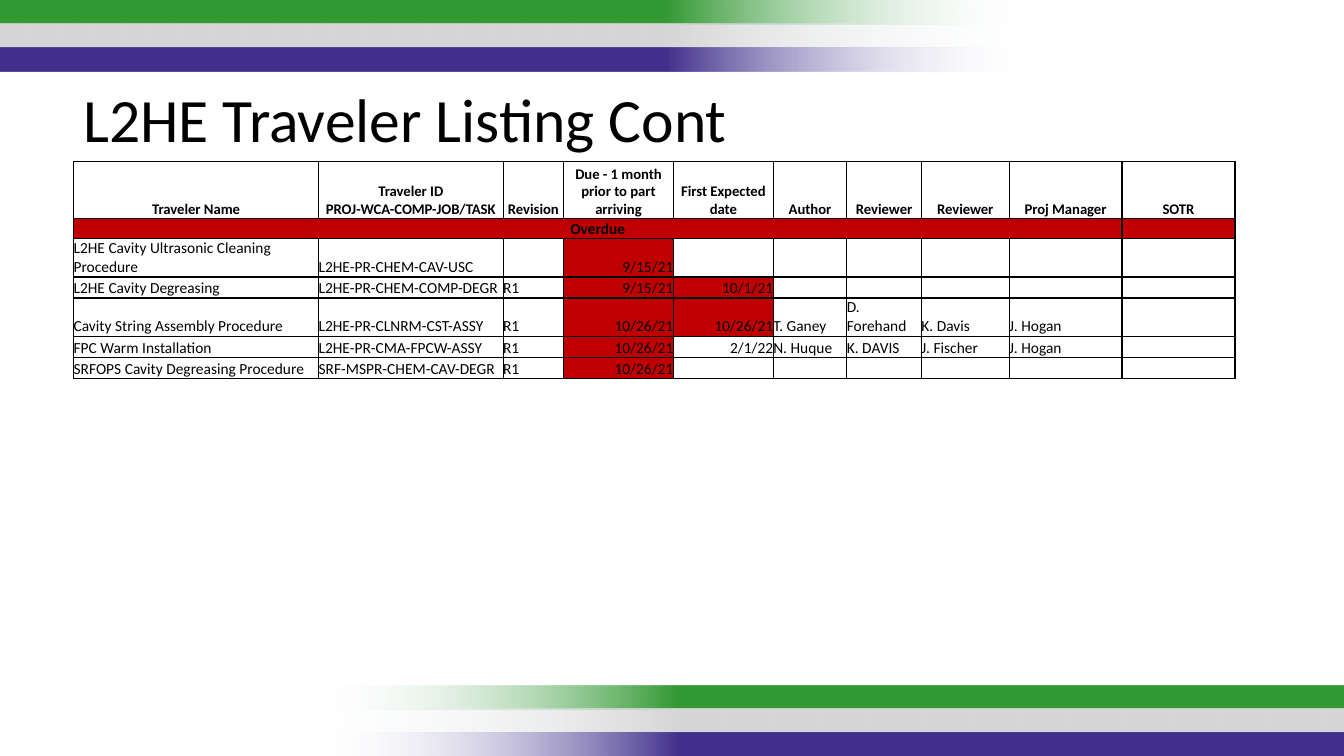
from dataclasses import dataclass

from lxml import etree
from pptx import Presentation
from pptx import util as u
from pptx.dml.color import RGBColor
from pptx.enum import shapes, text
from pptx.oxml import ns

BLACK = RGBColor(0x00, 0x00, 0x00)
RED = RGBColor(0xC0, 0x00, 0x00)
PALE = RGBColor(0xF7, 0xFA, 0xFD)
GREEN = RGBColor(0x33, 0x99, 0x33)
GRAY = RGBColor(0xD6, 0xD6, 0xD6)
PURPLE = RGBColor(0x42, 0x31, 0x8C)
FONT = "Calibri"

LEFT = text.PP_ALIGN.LEFT
MID = text.PP_ALIGN.CENTER
RIGHT = text.PP_ALIGN.RIGHT

WIDTHS = [2.43, 1.83, 0.6, 1.09, 0.99, 0.73, 0.74, 0.87, 1.12, 1.12]
HEIGHTS = [0.57, 0.2] + [0.21] * 5
HEADS = ["Traveler Name", "Traveler ID\nPROJ-WCA-COMP-JOB/TASK", "Revision",
         "Due - 1 month prior to part arriving", "First Expected date",
         "Author", "Reviewer", "Reviewer", "Proj Manager", "SOTR"]
DATES = (3, 4)  # columns that hold dates


@dataclass
class Band:
    left: float
    top: float
    color: RGBColor
    turn: int


@dataclass
class Job:
    cells: list[str]
    late: tuple[int, ...] = (3,)  # overdue date columns


BANDS = [
    Band(-0.02, 0, GREEN, 180),
    Band(-0.01, 0.23, GRAY, 180),
    Band(-0.01, 0.47, PURPLE, 180),
    Band(3.17, 6.8, GREEN, 0),
    Band(3.18, 7.03, GRAY, 0),
    Band(3.18, 7.27, PURPLE, 0),
]

JOBS = [
    Job(["L2HE Cavity Ultrasonic Cleaning Procedure", "L2HE-PR-CHEM-CAV-USC",
         "", "9/15/21"]),
    Job(["L2HE Cavity Degreasing", "L2HE-PR-CHEM-COMP-DEGR", "R1",
         "9/15/21", "10/1/21"], DATES),
    Job(["Cavity String Assembly Procedure", "L2HE-PR-CLNRM-CST-ASSY", "R1",
         "10/26/21", "10/26/21", "T. Ganey", "D. Forehand", "K. Davis",
         "J. Hogan"], DATES),
    Job(["FPC Warm Installation", "L2HE-PR-CMA-FPCW-ASSY", "R1", "10/26/21",
         "2/1/22", "N. Huque", "K. DAVIS", "J. Fischer", "J. Hogan"]),
    Job(["SRFOPS Cavity Degreasing Procedure", "SRF-MSPR-CHEM-CAV-DEGR",
         "R1", "10/26/21"]),
]


def draw_band(slide, band: Band) -> None:
    bar = slide.shapes.add_shape(
        shapes.MSO_SHAPE.RECTANGLE, u.Inches(band.left), u.Inches(band.top),
        u.Inches(10.17), u.Inches(0.24))
    bar.shadow.inherit = False
    bar.rotation = band.turn
    bar.line.fill.background()
    bar.fill.gradient()
    bar.fill.gradient_angle = 0
    fade, full = bar.fill.gradient_stops
    fade.color.rgb, fade.position = PALE, 0
    full.color.rgb, full.position = band.color, 0.35
    # The pale end is fully transparent
    tint = bar.fill._xPr.find(".//" + ns.qn("a:srgbClr"))
    etree.SubElement(tint, ns.qn("a:alpha"), val="0")


def add_edges(cell) -> None:
    props = cell._tc.get_or_add_tcPr()
    for spot, side in enumerate(("lnL", "lnR", "lnT", "lnB")):
        line = etree.Element(ns.qn("a:" + side), w=str(u.Pt(1)))
        fill = etree.SubElement(line, ns.qn("a:solidFill"))
        etree.SubElement(fill, ns.qn("a:srgbClr"), val=str(BLACK))
        props.insert(spot, line)


def fill_cell(cell, words: str, align: text.PP_ALIGN, size: float = 11,
              bold: bool = False, red: bool = False) -> None:
    pad = u.Inches(0.01 if bold else 0)
    cell.margin_left = cell.margin_right = cell.margin_top = pad
    cell.margin_bottom = 0
    cell.vertical_anchor = text.MSO_ANCHOR.BOTTOM
    if red:
        cell.fill.solid()
        cell.fill.fore_color.rgb = RED
    else:
        cell.fill.background()
    add_edges(cell)
    para = cell.text_frame.paragraphs[0]
    para.text = words
    para.alignment = align
    font = para.font
    font.name, font.size, font.bold = FONT, u.Pt(size), bold
    font.color.rgb = BLACK
    if not words:  # keeps empty cells from stretching the row
        etree.SubElement(para._p, ns.qn("a:endParaRPr"),
                         sz=str(int(size * 100)))


def draw_table(slide) -> None:
    frame = slide.shapes.add_table(
        len(HEIGHTS), len(WIDTHS), u.Inches(0.73), u.Inches(1.6),
        u.Inches(sum(WIDTHS)), u.Inches(sum(HEIGHTS)))
    table = frame.table
    table.first_row = table.horz_banding = False
    for col, width in zip(table.columns, WIDTHS):
        col.width = u.Inches(width)
    for row, height in zip(table.rows, HEIGHTS):
        row.height = u.Inches(height)

    # Header and overdue rows
    for col, head in enumerate(HEADS):
        fill_cell(table.cell(0, col), head, MID, 10.5, bold=True)
        fill_cell(table.cell(1, col), "" if col else "Overdue", MID,
                  bold=True, red=True)
    table.cell(1, 0).merge(table.cell(1, 8))

    # Traveler rows
    for row, job in enumerate(JOBS, 2):
        for col in range(len(WIDTHS)):
            words = job.cells[col] if col < len(job.cells) else ""
            fill_cell(table.cell(row, col), words,
                      RIGHT if col in DATES else LEFT, red=col in job.late)


def draw_title(slide) -> None:
    box = slide.shapes.add_textbox(u.Inches(0.73), u.Inches(0.75),
                                   u.Inches(10.31), u.Inches(0.84))
    box.text_frame.word_wrap = True
    para = box.text_frame.paragraphs[0]
    para.text = "L2HE Traveler Listing Cont"
    para.font.name, para.font.size = FONT, u.Pt(44)
    para.font.color.rgb = BLACK


def main() -> None:
    deck = Presentation()
    deck.slide_width, deck.slide_height = u.Inches(13.33), u.Inches(7.5)
    slide = deck.slides.add_slide(deck.slide_layouts[6])
    for band in BANDS:
        draw_band(slide, band)
    draw_table(slide)
    draw_title(slide)
    deck.save("out.pptx")


if __name__ == "__main__":
    main()
